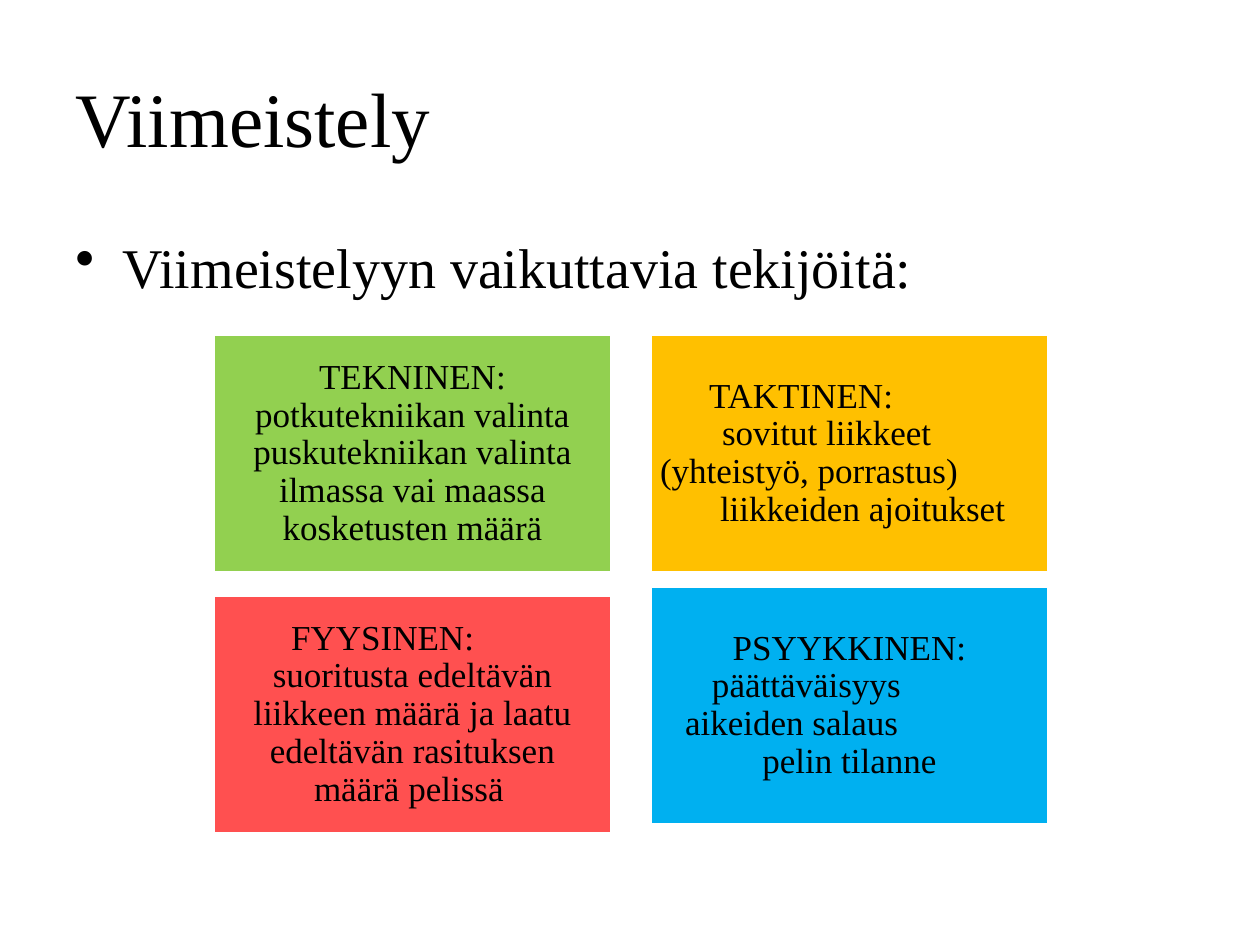
from lxml import etree
from pptx import Presentation
from pptx import util as u
from pptx.dml.color import RGBColor
from pptx.enum import shapes, text
from pptx.oxml import ns

BLACK = RGBColor(0x00, 0x00, 0x00)
WHITE = RGBColor(0xFF, 0xFF, 0xFF)
GREEN = RGBColor(0x92, 0xD0, 0x50)
AMBER = RGBColor(0xFF, 0xC0, 0x00)
RED = RGBColor(0xFF, 0x50, 0x50)
BLUE = RGBColor(0x00, 0xB0, 0xF0)

SCALE = 914400 / 126
LEFT, RIGHT = 213, 650
WIDE, HIGH = 399, 239

CARDS = [
    (LEFT, 334, GREEN, [
        ("TEKNINEN:", None),
        ("potkutekniikan valinta", None),
        ("puskutekniikan valinta", None),
        ("ilmassa vai maassa", None),
        ("kosketusten määrä", None),
    ]),
    (RIGHT, 334, AMBER, [
        ("TAKTINEN:", 49),
        ("sovitut liikkeet", 62),
        ("(yhteistyö, porrastus)", 0),
        ("liikkeiden ajoitukset", 60),
    ]),
    (LEFT, 595, RED, [
        ("FYYSINEN:", 68),
        ("suoritusta edeltävän", None),
        ("liikkeen määrä ja laatu", None),
        ("edeltävän rasituksen", None),
        ("määrä pelissä", 91),
    ]),
    (RIGHT, 586, BLUE, [
        ("PSYYKKINEN:", None),
        ("päättäväisyys", 52),
        ("aikeiden salaus", 25),
        ("pelin tilanne", None),
    ]),
]


def px(n):
    return u.Emu(round(n * SCALE))


def put(item, vals):
    for key, val in vals.items():
        setattr(item, key, val)


class Deck:
    face = "Times New Roman"

    def __init__(self, wide, high):
        self.prs = Presentation()
        put(self.prs, {"slide_width": px(wide), "slide_height": px(high)})
        self.slide = self.prs.slides.add_slide(self.prs.slide_layouts[5])

    def font(self, para, size):
        put(para.font, {"name": self.face, "size": u.Pt(size)})
        para.font.color.rgb = BLACK

    def title(self, words, x, y, w, h):
        box = self.slide.shapes.title
        put(box, {"left": px(x), "top": px(y), "width": px(w), "height": px(h)})
        frame = box.text_frame
        put(frame, {"text": words, "vertical_anchor": text.MSO_ANCHOR.MIDDLE})
        para = frame.paragraphs[0]
        para.alignment = text.PP_ALIGN.LEFT
        self.font(para, 44)

    def bullet(self, words, x, y, w, h, hang):
        box = self.slide.shapes.add_textbox(px(x), px(y), px(w), px(h))
        frame = box.text_frame
        put(frame, {"text": words, "word_wrap": True, "margin_top": px(12)})
        para = frame.paragraphs[0]
        props = para._p.get_or_add_pPr()
        props.set("marL", str(px(hang)))
        props.set("indent", str(px(-hang)))
        etree.SubElement(props, ns.qn("a:buChar")).set("char", "•")
        self.font(para, 32)

    def card(self, x, y, fill, lines):
        box = self.slide.shapes.add_shape(
            shapes.MSO_SHAPE.RECTANGLE, px(x), px(y), px(WIDE), px(HIGH))
        box.shadow.inherit = False
        box.fill.solid()
        box.fill.fore_color.rgb = fill
        box.line.color.rgb = WHITE
        box.line.width = u.Pt(2)
        frame = box.text_frame
        put(frame, {"word_wrap": True,
                    "vertical_anchor": text.MSO_ANCHOR.MIDDLE})
        put(frame, {f"margin_{side}": px(10)
                    for side in ("left", "top", "right", "bottom")})
        frame.text = "\n".join(words for words, start in lines)
        for para, (words, start) in zip(frame.paragraphs, lines):
            mid = start is None
            put(para, {
                "alignment": text.PP_ALIGN.CENTER if mid else text.PP_ALIGN.LEFT,
                "line_spacing": 0.9,
            })
            if start:
                para._p.get_or_add_pPr().set("marL", str(px(start)))
            self.font(para, 20)


def main():
    deck = Deck(1260, 945)
    deck.title("Viimeistely", 63, 38, 1134, 157)
    deck.bullet("Viimeistelyyn vaikuttavia tekijöitä:", 63, 220, 1134, 624, 47)
    for card in CARDS:
        deck.card(*card)
    deck.prs.save("out.pptx")


if __name__ == "__main__":
    main()
